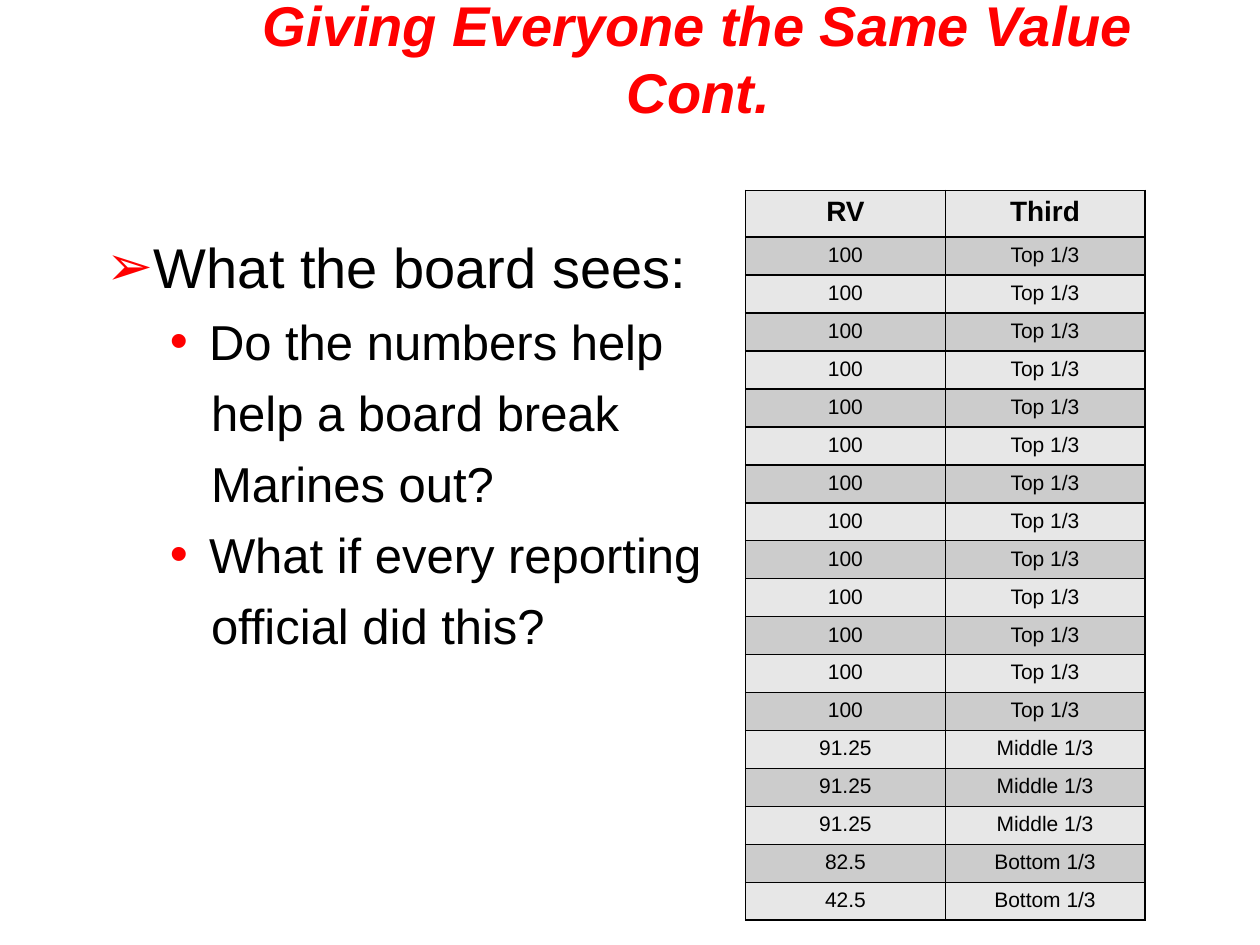
from lxml import etree
from pptx import Presentation
from pptx.dml.color import RGBColor
from pptx.enum.text import MSO_ANCHOR, MSO_AUTO_SIZE, PP_ALIGN
from pptx.oxml.ns import qn
from pptx.util import Cm, Pt

CENTER, LEFT = PP_ALIGN.CENTER, PP_ALIGN.LEFT
MIDDLE, TOP = MSO_ANCHOR.MIDDLE, MSO_ANCHOR.TOP
NO_FIT = MSO_AUTO_SIZE.NONE

# Content
TITLE = "Giving Everyone the Same Value Cont."
POINTS = [  # style, text
    ("main", "What the board sees:"),
    ("sub", "Do the numbers help"),
    ("more", "help a board break"),
    ("more", "Marines out?"),
    ("sub", "What if every reporting"),
    ("more", "official did this?"),
]
HEAD = ("RV", "Third")
GROUPS = [  # value, third, number of rows
    ("100", "Top 1/3", 13),
    ("91.25", "Middle 1/3", 3),
    ("82.5", "Bottom 1/3", 1),
    ("42.5", "Bottom 1/3", 1),
]

# Theme
THEME = {
    "font": "Arial", "red": "FF0000", "ink": "000000",
    "bands": ("E7E7E7", "CCCCCC"),
    "title": 32, "head": 16, "cell": 12, "gap": 7, "line": 1,
}
STYLES = {  # level, type size, left indent and hang in cm, bullet, bullet size
    "main": (0, 32, 0.95, -0.95, "➢", 100),
    "sub": (1, 28, 2.06, -0.79, "•", 105),
    "more": (1, 28, 2.1, 0, None, 100),
}

# Places in cm: left, top, width, height
TITLE_BOX = (4.65, 0.43, 18.85, 1.47)
BODY_BOX = (1.9, 4.55, 21.6, 12.5)
GRID_BOX = (15.03, 3.84, 8.05, 14.71)
HEAD_ROW = 0.94


def place(shape, box, anchor):
    shape.left, shape.top, shape.width, shape.height = map(Cm, box)
    frame = shape.text_frame
    frame.word_wrap = True
    frame.auto_size = NO_FIT
    frame.vertical_anchor = anchor
    return frame


def write(para, text, size, color, align, bold=False, italic=False):
    para.alignment = align
    run = para.add_run()
    run.text = text
    font = run.font
    font.name, font.size = THEME["font"], Pt(size)
    font.bold, font.italic = bold, italic
    font.color.rgb = RGBColor.from_string(color)


def add(parent, tag, **attrs):
    node = etree.SubElement(parent, qn(tag))
    for key, val in attrs.items():
        node.set(key, str(val))
    return node


def indent(para, left, hang, mark, scale):
    props = para._p.get_or_add_pPr()
    props.set("marL", str(Cm(left)))
    props.set("indent", str(Cm(hang)))
    if mark is None:
        add(props, "a:buNone")
        return
    add(add(props, "a:buClr"), "a:srgbClr", val=THEME["red"])
    add(props, "a:buSzPct", val=scale * 1000)
    add(props, "a:buFont", typeface=THEME["font"])
    add(props, "a:buChar", char=mark)


def paint(cell, color):
    props = cell._tc.get_or_add_tcPr()
    for side in ("a:lnL", "a:lnR", "a:lnT", "a:lnB"):
        line = add(props, side, w=Pt(THEME["line"]))
        add(add(line, "a:solidFill"), "a:srgbClr", val=THEME["ink"])
    cell.fill.solid()
    cell.fill.fore_color.rgb = RGBColor.from_string(color)


def main():
    deck = Presentation()
    deck.slide_width, deck.slide_height = Cm(25.4), Cm(19.05)
    slide = deck.slides.add_slide(deck.slide_layouts[1])

    # Title
    frame = place(slide.shapes.title, TITLE_BOX, MIDDLE)
    write(frame.paragraphs[0], TITLE, THEME["title"], THEME["red"],
          CENTER, bold=True, italic=True)

    # Bullet list
    frame = place(slide.placeholders[1], BODY_BOX, TOP)
    for i, (style, text) in enumerate(POINTS):
        level, size, left, hang, mark, scale = STYLES[style]
        para = frame.add_paragraph() if i else frame.paragraphs[0]
        para.level = level
        indent(para, left, hang, mark, scale)
        para.space_before = Pt(THEME["gap"] if i else 0)
        write(para, text, size, THEME["ink"], LEFT)

    # Table
    rows = [HEAD]
    for value, third, count in GROUPS:
        rows += [(value, third)] * count
    shape = slide.shapes.add_table(len(rows), len(HEAD), *map(Cm, GRID_BOX))
    grid = shape.table
    step = (GRID_BOX[3] - HEAD_ROW) / (len(rows) - 1)
    for r, row in enumerate(rows):
        grid.rows[r].height = Cm(step if r else HEAD_ROW)
        size = THEME["cell" if r else "head"]
        for c, text in enumerate(row):
            cell = grid.cell(r, c)
            paint(cell, THEME["bands"][r % 2])
            write(cell.text_frame.paragraphs[0], text, size, THEME["ink"],
                  CENTER, bold=r == 0)

    deck.save("out.pptx")


if __name__ == "__main__":
    main()
